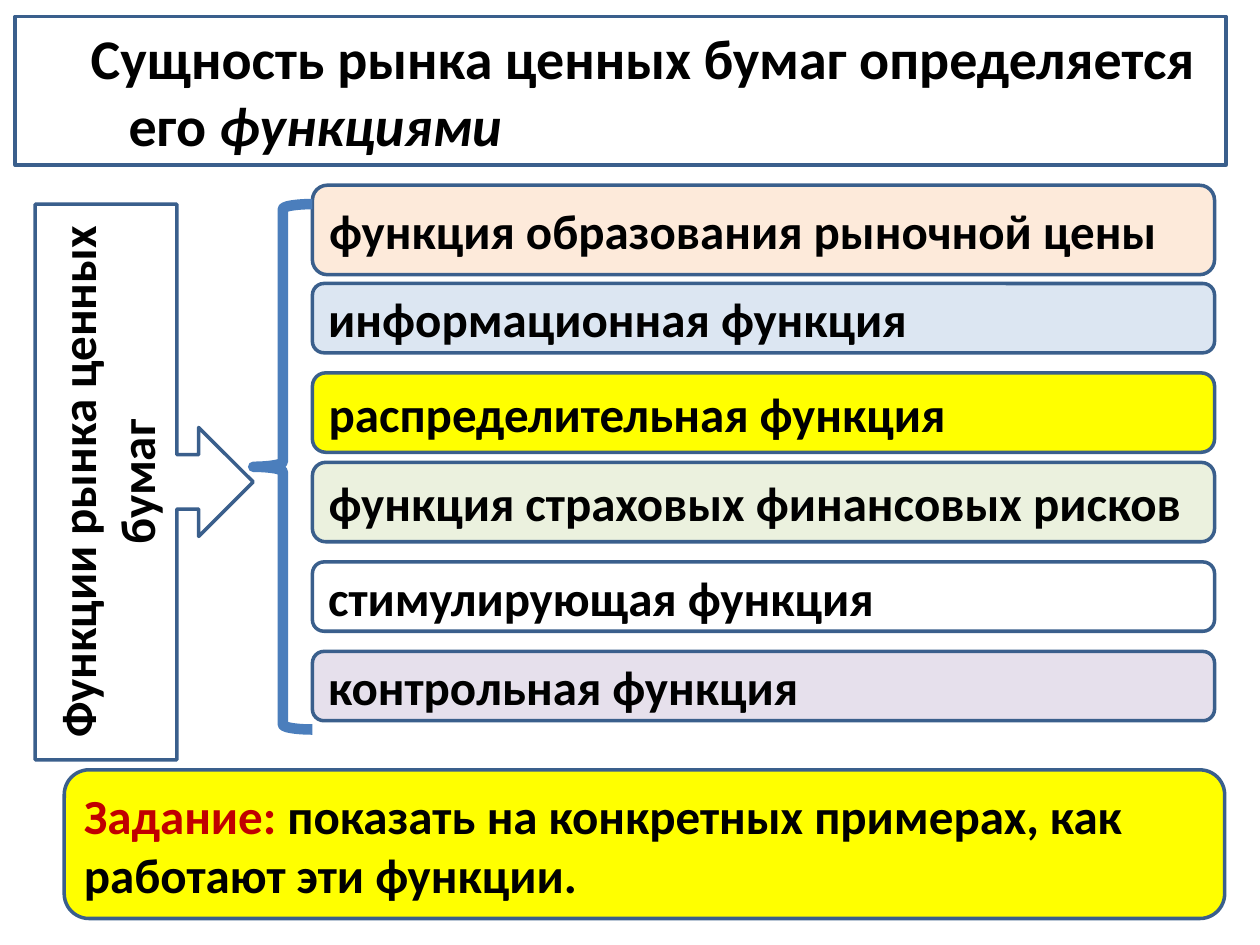
from dataclasses import dataclass

from lxml.etree import SubElement
from pptx import Presentation
from pptx.dml.color import RGBColor as RGB
from pptx.enum.shapes import MSO_SHAPE as Geom
from pptx.enum.text import MSO_ANCHOR as Anchor, MSO_AUTO_SIZE as Fit, PP_ALIGN as Align
from pptx.oxml.ns import qn
from pptx.util import Inches, Pt


@dataclass(frozen=True)
class Theme:
    font: str = "Calibri"
    head: int = 32
    body: int = 28
    edge: str = "3A5F8C"
    brace: str = "4B7EBC"
    ink: str = "000000"
    red: str = "C00000"
    white: str = "FFFFFF"
    peach: str = "FDEADA"
    blue: str = "DCE6F2"
    yellow: str = "FFFF00"
    green: str = "EBF1DE"
    violet: str = "E6E0EC"


THEME = Theme()


def write(shape, *runs, size=THEME.body, align=Align.LEFT, left=0, hang=0, after=0):
    """Fill the shape with one bold paragraph; each run is (text, format dict)."""
    frame = shape.text_frame
    frame.word_wrap = True
    frame.auto_size = Fit.NONE
    frame.vertical_anchor = Anchor.MIDDLE
    para = frame.paragraphs[0]
    para.alignment = align
    para.space_after = Pt(after)
    if left:
        props = para._p.get_or_add_pPr()
        props.set("marL", str(Inches(left)))
        props.set("indent", str(Inches(hang)))
    for text, form in runs:
        run = para.add_run()
        run.text = text
        font = run.font
        font.name, font.size, font.bold = THEME.font, Pt(size), True
        font.italic = form.get("italic", False)
        font.color.rgb = RGB.from_string(form.get("color", THEME.ink))


class Page:
    def __init__(self, deck, theme):
        self.theme = theme
        self.slide = deck.slides.add_slide(deck.slide_layouts[5])

    def paint(self, shape, fill, edge, width):
        if fill:
            shape.fill.solid()
            shape.fill.fore_color.rgb = RGB.from_string(fill)
        else:
            shape.fill.background()
        shape.line.color.rgb = RGB.from_string(edge)
        shape.line.width = Pt(width)

    def title(self, box, *runs, **form):
        """Turn the title placeholder into a rounded, outlined box."""
        shape = self.slide.shapes.title
        shape.left, shape.top, shape.width, shape.height = map(Inches, box)
        geom = SubElement(shape._element.spPr, qn("a:prstGeom"), prst="roundRect")
        SubElement(geom, qn("a:avLst"))
        self.paint(shape, self.theme.white, self.theme.edge, 2)
        write(shape, *runs, size=self.theme.head, **form)

    def shape(self, kind, box, fill=None, edge=None, width=2):
        shape = self.slide.shapes.add_shape(kind, *map(Inches, box))
        shape.shadow.inherit = False
        self.paint(shape, fill, edge or self.theme.edge, width)
        return shape

    def card(self, box, fill, *runs):
        write(self.shape(Geom.ROUNDED_RECTANGLE, box, fill), *runs)

    def callout(self, box, text):
        shape = self.shape(Geom.RIGHT_ARROW_CALLOUT, box, self.theme.white)
        write(shape, (text, {}), align=Align.CENTER)
        shape.text_frame._txBody.bodyPr.set("vert", "vert270")

    def brace(self, box):
        self.shape(Geom.LEFT_BRACE, box, edge=self.theme.brace, width=6)


def main():
    deck = Presentation()
    deck.slide_width, deck.slide_height = Inches(10), Inches(7.5)
    page = Page(deck, THEME)

    page.title((0.12, 0.13, 9.61, 1.18),
               ("Сущность рынка ценных бумаг определяется его ", {}),
               ("функциями", {"italic": True}),
               left=0.8, hang=-0.3, after=6)
    page.callout((0.28, 1.62, 1.73, 4.41), "Функции рынка ценных бумаг")

    roles = [
        (1.47, 0.71, THEME.peach, "функция образования рыночной цены"),
        (2.25, 0.55, THEME.blue, "информационная функция"),
        (2.96, 0.63, THEME.yellow, "распределительная функция"),
        (3.67, 0.63, THEME.green, "функция страховых финансовых рисков"),
        (4.46, 0.55, THEME.white, "стимулирующая функция"),
        (5.17, 0.55, THEME.violet, "контрольная функция"),
    ]
    for top, height, fill, text in roles:
        page.card((2.48, top, 7.16, height), fill, (text, {}))
    page.brace((2.01, 1.62, 0.47, 4.17))

    page.card((0.51, 6.11, 9.21, 1.18), THEME.yellow,
              ("Задание:", {"color": THEME.red}),
              (" показать на конкретных примерах, как работают эти функции.", {}))
    deck.save("out.pptx")


if __name__ == "__main__":
    main()
